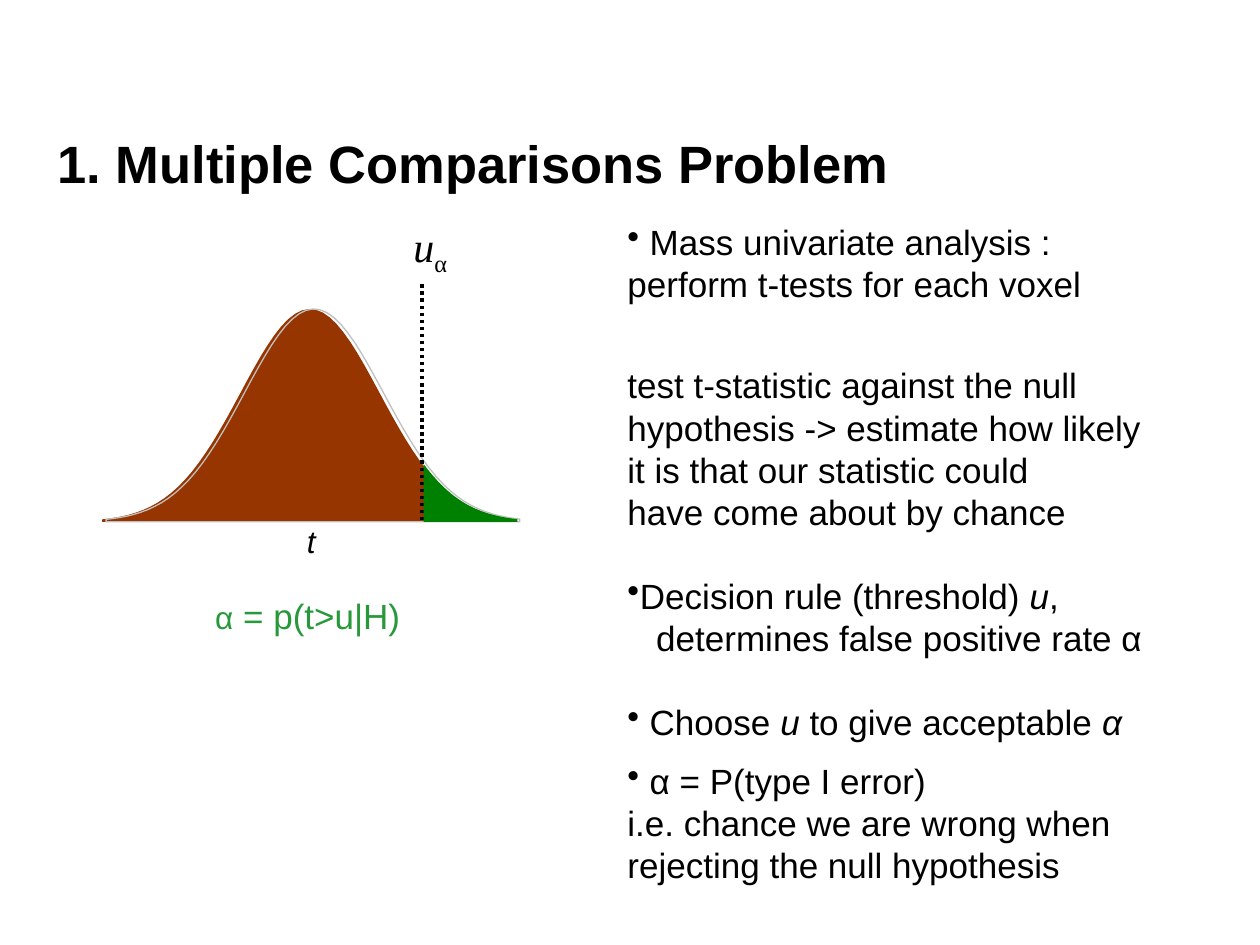
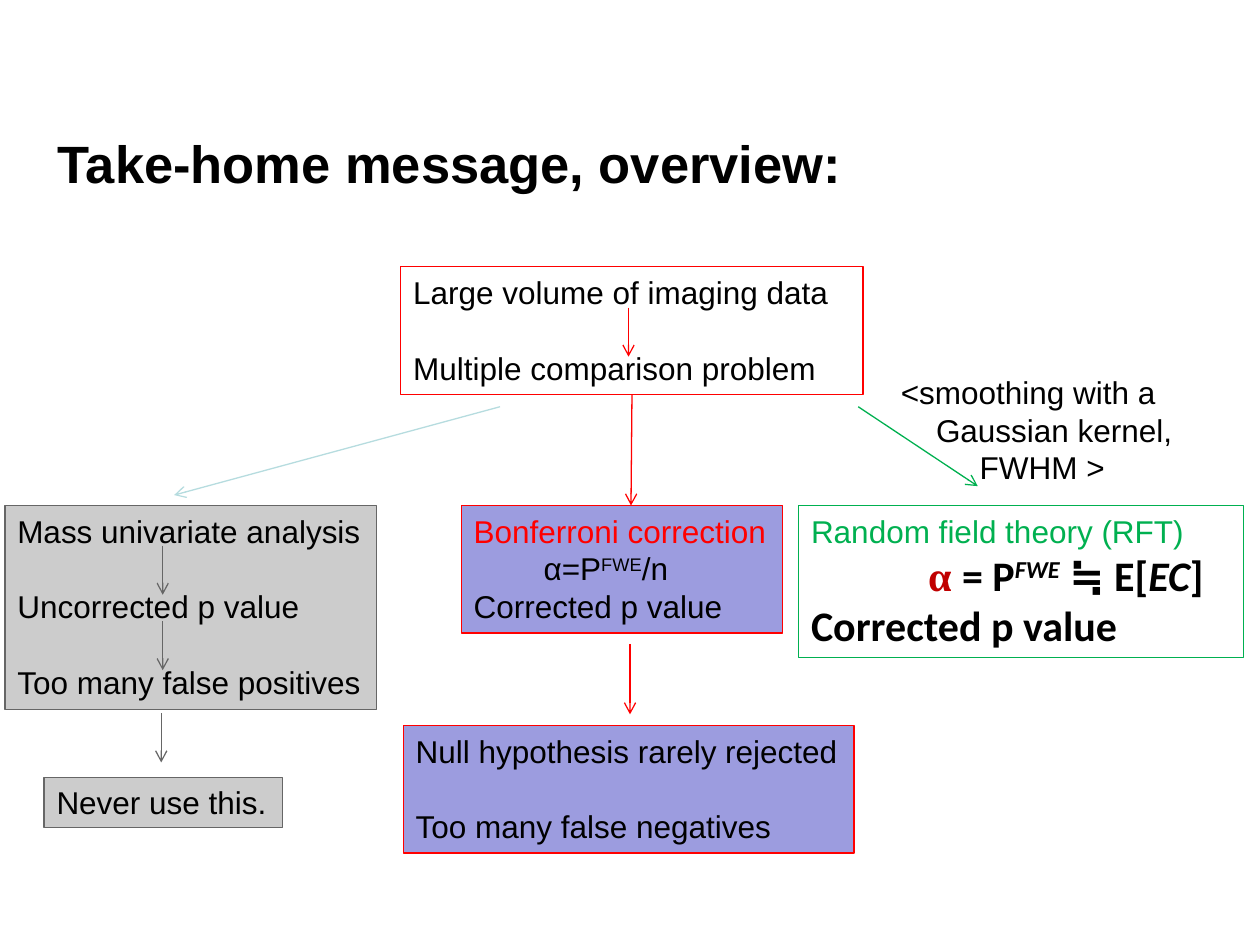
import math

import pptx
import pptx.util
from lxml import etree
from pptx.dml.color import RGBColor
from pptx.enum.dml import MSO_LINE
from pptx.enum.shapes import MSO_CONNECTOR, MSO_SHAPE
from pptx.enum.text import MSO_ANCHOR, MSO_AUTO_SIZE, PP_ALIGN
from pptx.oxml.ns import qn
from pptx.util import Cm, Pt

COLOURS = {
    "black": "000000", "white": "FFFFFF", "red": "FF0000", "dark red": "C00000",
    "green": "00B050", "alpha green": "27993A", "tail green": "008000",
    "brown": "973500", "outline": "BFBFBF", "lilac": "9C9CDF",
    "light grey": "CCCCCC", "grey": "666666", "pale teal": "B6DCDF",
}
TITLE_ONLY = 5
BLANK_LINE = {18: 21.6, 20: 24}  # gap in points that equals one empty line


def colour(name):
    return RGBColor.from_string(COLOURS[name])


def style_font(font, size=None, face=None, ink=None, bold=None, italic=None):
    if size:
        font.size = Pt(size)
    if face:
        font.name = face
    if ink:
        font.color.rgb = colour(ink)
    if bold is not None:
        font.bold = bold
    if italic is not None:
        font.italic = italic


def para(*runs, before=0, indent=0, bullet=False, **font):
    """Describe a paragraph; a run is a string or a (string, font options) pair."""
    return {"runs": runs, "before": before, "indent": indent, "bullet": bullet, "font": font}


class Deck:
    def __init__(self):
        self.prs = pptx.Presentation()
        self.prs.slide_width, self.prs.slide_height = Cm(25.4), Cm(19.05)
        self.slide = None

    def add_slide(self, title):
        self.slide = self.prs.slides.add_slide(self.prs.slide_layouts[TITLE_ONLY])
        heading = self.slide.shapes.title
        heading.left, heading.top, heading.width, heading.height = map(Cm, (0.91, 2.51, 23.57, 3.61))
        frame = heading.text_frame
        frame.text = title
        frame.vertical_anchor = MSO_ANCHOR.TOP
        frame.auto_size = MSO_AUTO_SIZE.NONE
        frame.paragraphs[0].alignment = PP_ALIGN.LEFT
        style_font(frame.paragraphs[0].font, 30, "Arial", "black", True)

    def fill_text(self, frame, paragraphs, size=18, align=PP_ALIGN.LEFT, wrap=False):
        frame.word_wrap = wrap
        frame.auto_size = MSO_AUTO_SIZE.SHAPE_TO_FIT_TEXT
        frame.vertical_anchor = MSO_ANCHOR.TOP
        for number, content in enumerate(paragraphs):
            paragraph = frame.add_paragraph() if number else frame.paragraphs[0]
            paragraph.alignment = align
            props = paragraph._p.get_or_add_pPr()
            props.set("marL", str(Cm(content["indent"])))
            props.set("indent", "0")
            if content["bullet"]:
                etree.SubElement(props, qn("a:buChar")).set("char", "•")
            if content["before"]:
                paragraph.space_before = Pt(content["before"])
            style_font(paragraph.font, **{"size": size, "face": "Arial", "ink": "black", **content["font"]})
            for piece in content["runs"]:
                words, options = (piece, {}) if isinstance(piece, str) else piece
                options = dict(options)
                baseline = options.pop("baseline", None)
                run = paragraph.add_run()
                run.text = words
                style_font(run.font, **options)
                if baseline:
                    run._r.get_or_add_rPr().set("baseline", str(baseline * 1000))

    def label(self, left, top, width, height, paragraphs, **options):
        holder = self.slide.shapes.add_textbox(*map(Cm, (left, top, width, height)))
        self.fill_text(holder.text_frame, paragraphs, **options)

    def box(self, left, top, width, height, paragraphs, line, fill=None, **options):
        rect = self.slide.shapes.add_shape(MSO_SHAPE.RECTANGLE, *map(Cm, (left, top, width, height)))
        self.paint(rect, fill, line, 0.75)
        self.fill_text(rect.text_frame, paragraphs, **options)
        return rect

    def paint(self, shape, fill=None, line=None, weight=0):
        shape.shadow.inherit = False
        if fill:
            shape.fill.solid()
            shape.fill.fore_color.rgb = colour(fill)
        else:
            shape.fill.background()
        if line:
            shape.line.color.rgb = colour(line)
            shape.line.width = Pt(weight)
        else:
            shape.line.fill.background()

    def outline(self, points, **paint):
        points = [(Cm(x), Cm(y)) for x, y in points]
        builder = self.slide.shapes.build_freeform(*points[0])
        builder.add_line_segments(points[1:], close=True)
        self.paint(builder.convert_to_shape(), **paint)

    def line(self, start, end, ink, weight=0.75, dash=None, arrow=True, source=None):
        """Draw a line; source is a box whose bottom side the line starts from."""
        link = self.slide.shapes.add_connector(MSO_CONNECTOR.STRAIGHT, *map(Cm, start + end))
        link.line.color.rgb = colour(ink)
        link.line.width = Pt(weight)
        if dash:
            link.line.dash_style = dash
        if arrow:
            etree.SubElement(link.line._get_or_add_ln(), qn("a:tailEnd")).set("type", "arrow")
        etree.SubElement(link._element.spPr, qn("a:effectLst"))
        if source:
            link.begin_connect(source, 2)


def bell(start, end, shift=0):
    """Points of the area under the normal curve between two x positions."""
    centre, sigma, base, height, steps = 6.25, 1.4, 10.52, 4.29, 60
    xs = [start + (end - start) * step / steps for step in range(steps + 1)]
    curve = [(x + shift, base - height * math.exp(-((x - centre) / sigma) ** 2 / 2)) for x in xs]
    return [(start + shift, base), *curve, (end + shift, base)]


def multiple_comparisons(deck):
    deck.add_slide("1. Multiple Comparisons Problem")
    left, threshold, right = 2.06, 8.51, 10.4
    italic = {"italic": True}

    deck.label(2.11, 10.39, 8.33, 1.02, [para("t", italic=True)], align=PP_ALIGN.CENTER, wrap=True)
    deck.outline(bell(left, right), fill="brown")
    deck.outline(bell(left, right, shift=0.08), line="outline")
    deck.line((threshold, 10.49), (threshold, 5.72), "black", 2, MSO_LINE.ROUND_DOT, arrow=False)
    deck.outline(bell(threshold, right, shift=0.03), fill="tail green")
    deck.label(7.9, 4.32, 1.55, 1.27,
               [para(("u", italic), ("α", {"baseline": -25}), size=24, face="Times New Roman")],
               align=PP_ALIGN.CENTER, wrap=True)
    deck.label(4.09, 11.86, 4.27, 1.09,
               [para(("α", {"size": 18}), (" = p(t>u|H)", {"size": 20}), ink="alpha green")])

    gap = BLANK_LINE[20]
    deck.label(12.4, 4.32, 11.2, 18.14, [
        para(" Mass univariate analysis : perform t-tests for each voxel", bullet=True),
        para("test t-statistic against the null hypothesis -> estimate how likely "
             "it is that our statistic could", before=gap + 10),
        para("have come about by chance"),
        para("Decision rule (threshold) ", ("u", italic), ",", bullet=True, before=gap),
        para("determines false positive rate α", indent=0.58),
        para(" Choose ", ("u", italic), " to give acceptable ", ("α", italic), bullet=True, before=gap),
        para(" α = P(type I error)", bullet=True, before=10),
        para("i.e. chance we are wrong when rejecting the null hypothesis"),
    ], size=20, wrap=True)


def take_home(deck):
    deck.add_slide("Take-home message, overview:")
    gap = BLANK_LINE[18]
    row = 10.19
    step = 0.99  # length of the short arrows

    deck.line((10.08, 8.2), (3.51, 9.98), "pale teal")
    problem = deck.box(8.08, 5.38, 9.32, 2.57, [
        para("Large volume of imaging data"),
        para("Multiple comparison problem", before=gap),
    ], "red", wrap=True)
    deck.line((12.67, 6.2), (12.67, 6.2 + step), "red")
    deck.line((12.7, 8), (12.72, row), "red", source=problem)

    deck.box(9.3, row, 6.48, 2.57, [
        para("Bonferroni correction", ink="red"),
        para("α=P", ("FWE", {"baseline": 30}), "/n", indent=1.41),
        para("Corrected p value"),
    ], "red", "lilac")
    deck.line((12.7, 12.98), (12.7, 14.4), "red")
    deck.box(8.13, 14.63, 9.09, 2.57, [
        para("Null hypothesis rarely rejected"),
        para("Too many false negatives", before=gap),
    ], "red", "lilac")

    deck.box(0.1, row, 7.49, 4.11, [
        para("Mass univariate analysis"),
        para("Uncorrected p value", before=gap),
        para("Too many false positives", before=gap),
    ], "grey", "light grey")
    deck.box(0.89, 15.67, 4.8, 1.02, [para("Never use this.")], "grey", "light grey")
    for x, top in ((3.28, 11), (3.28, 12.52), (3.25, 14.38)):
        deck.line((x, top), (x, top + step), "grey")

    deck.line((17.3, 8.2), (19.71, 9.8), "green")
    deck.label(17.91, 7.39, 6.22, 2.57, [
        para("<smoothing with a"),
        para("Gaussian kernel,", indent=0.71),
        para("FWHM >", indent=1.59),
    ])
    formula = {"size": 24, "face": "Calibri", "bold": True}
    deck.box(16.1, row, 8.97, 3.07, [
        para("Random field theory (RFT)", ink="green"),
        para(("α ", {"face": "Times New Roman", "ink": "dark red"}), "= P",
             ("FWE", {"italic": True, "baseline": 30}), " ≒ E[", ("EC", {"italic": True}), "]",
             indent=2.36, **formula),
        para("Corrected p value", **formula),
    ], "green", "white")


def main():
    deck = Deck()
    multiple_comparisons(deck)
    take_home(deck)
    deck.prs.save("out.pptx")


if __name__ == "__main__":
    main()
